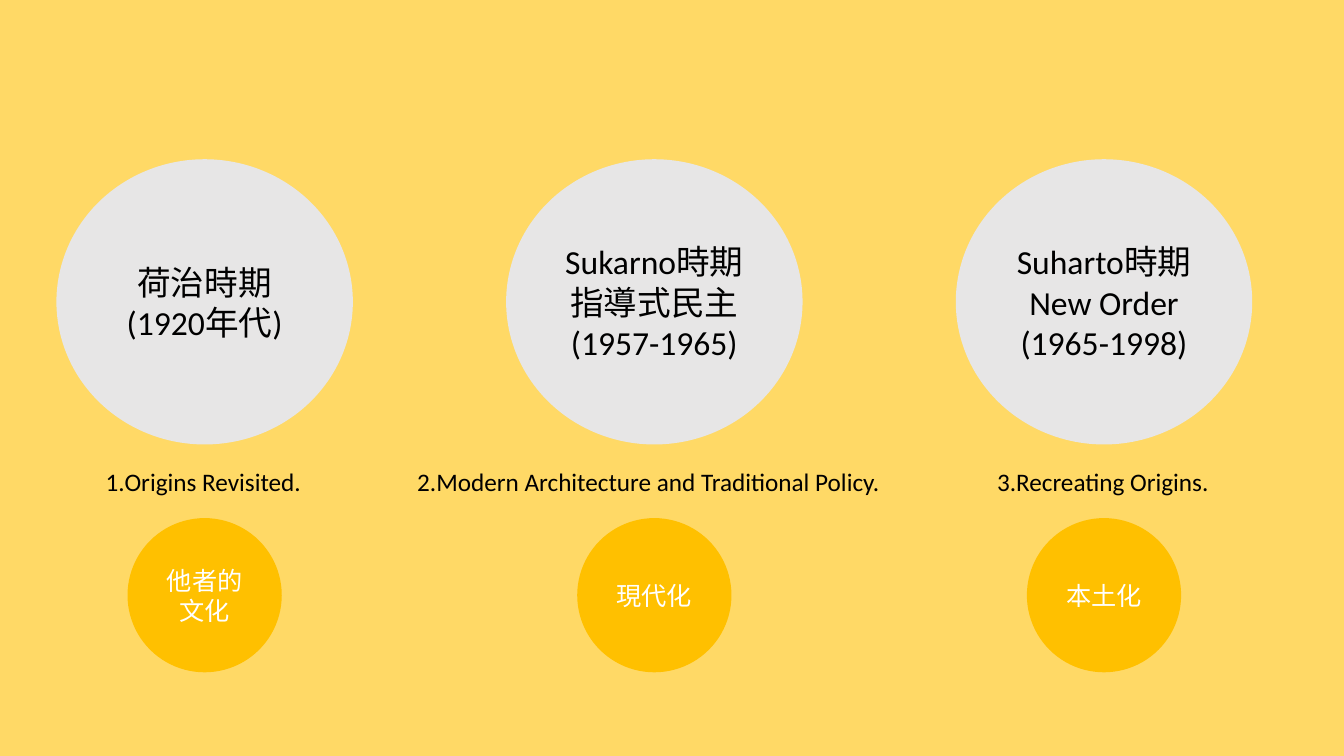
from pptx import Presentation, util as u
from pptx.dml.color import RGBColor
from pptx.enum import shapes, text

FIRST_CENTER = 2.03
COLUMN_PITCH = 4.46
PERIOD_SIZE = (2.94, 2.83)
THEME_SIZE = (1.53, 1.53)
ERAS = [
    (["荷治時期(1920年代)"], "1.Origins Revisited.", 2.16, "他者的文化"),
    (["Sukarno時期", "指導式民主(1957-1965)"],
     "2.Modern Architecture and Traditional Policy.", 4.9, "現代化"),
    (["Suharto時期New Order", "(1965-1998)"], "3.Recreating Origins.", 2.32, "本土化"),
]


def paint(fill, color):
    """Give a fill one solid colour."""
    fill.solid()
    fill.fore_color.rgb = RGBColor.from_string(color)


def write(frame, lines, size, color, align, **frame_format):
    """Write one paragraph per line and apply the frame's format."""
    for name, value in frame_format.items():
        setattr(frame, name, value)
    frame.text = "\n".join(lines)
    for paragraph in frame.paragraphs:
        paragraph.alignment = align
        for name, value in {"name": "Calibri", "size": u.Pt(size)}.items():
            setattr(paragraph.font, name, value)
        paragraph.font.color.rgb = RGBColor.from_string(color)


def box(center, top, width, height):
    """Return the place of a box centred on a column."""
    return [u.Inches(n) for n in (center - width / 2, top, width, height)]


def add_circle(slide, place, fill, lines, size, color):
    """Add a borderless ellipse with centred text."""
    circle = slide.shapes.add_shape(shapes.MSO_SHAPE.OVAL, *place)
    circle.shadow.inherit = False
    circle.line.fill.background()
    paint(circle.fill, fill)
    write(circle.text_frame, lines, size, color, text.PP_ALIGN.CENTER,
          word_wrap=True, vertical_anchor=text.MSO_ANCHOR.MIDDLE)


def add_caption(slide, place, caption):
    """Add a single-line caption."""
    label = slide.shapes.add_textbox(*place)
    write(label.text_frame, [caption], 18, "000000", text.PP_ALIGN.LEFT,
          word_wrap=False, auto_size=text.MSO_AUTO_SIZE.SHAPE_TO_FIT_TEXT)


def main():
    """Build the slide of three eras and save it."""
    deck = Presentation()
    deck.slide_width, deck.slide_height = u.Inches(13.33), u.Inches(7.5)
    slide = deck.slides.add_slide(deck.slide_layouts[6])
    paint(slide.background.fill, "FFD966")
    for column, (period, caption, caption_width, theme) in enumerate(ERAS):
        center = FIRST_CENTER + column * COLUMN_PITCH
        add_circle(slide, box(center, 1.58, *PERIOD_SIZE), "E7E6E6", period, 24, "000000")
        add_caption(slide, box(center, 4.58, caption_width, 0.4), caption)
        add_circle(slide, box(center, 5.14, *THEME_SIZE), "FFC000", [theme], 18, "FFFFFF")
    deck.save("out.pptx")


if __name__ == "__main__":
    main()
